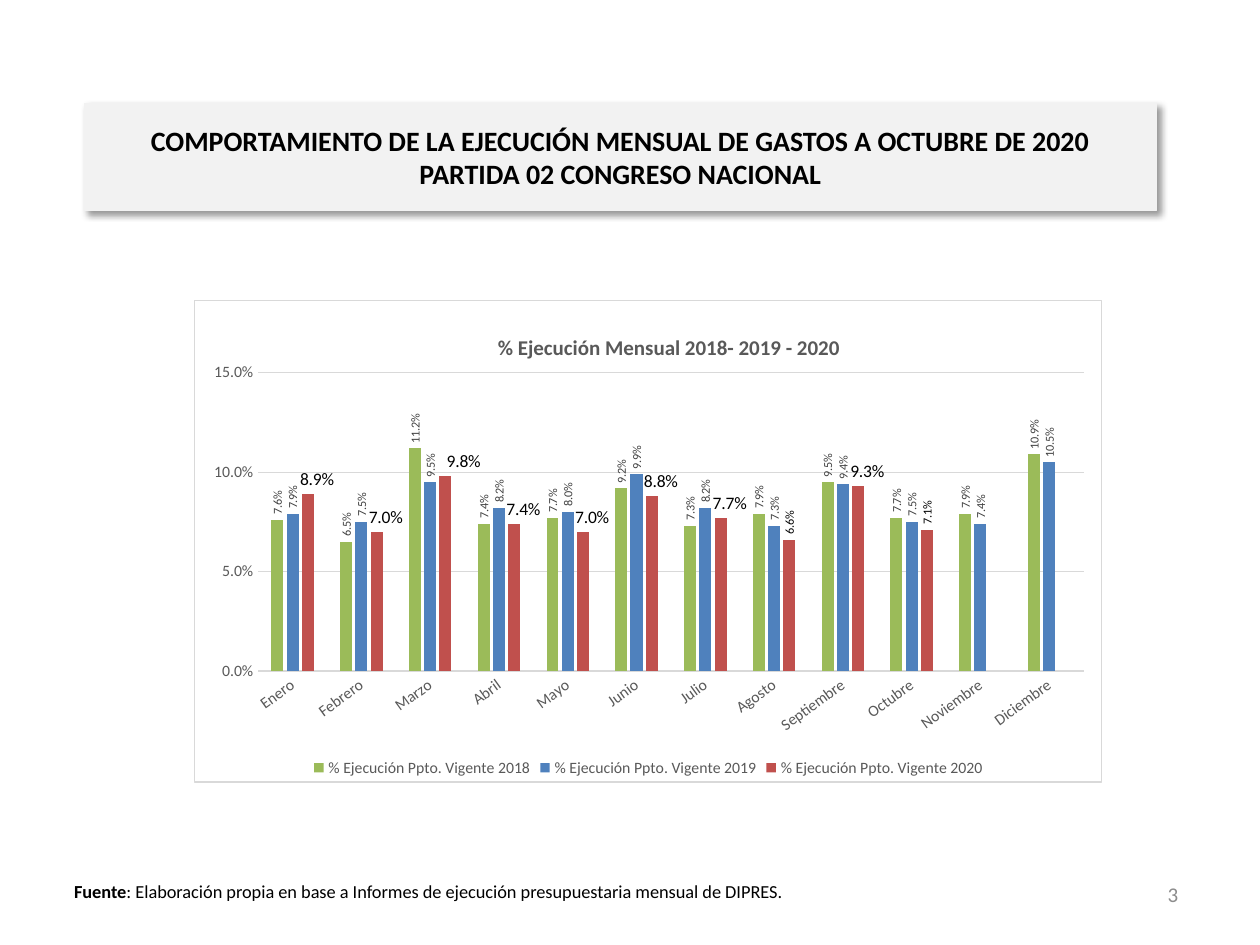
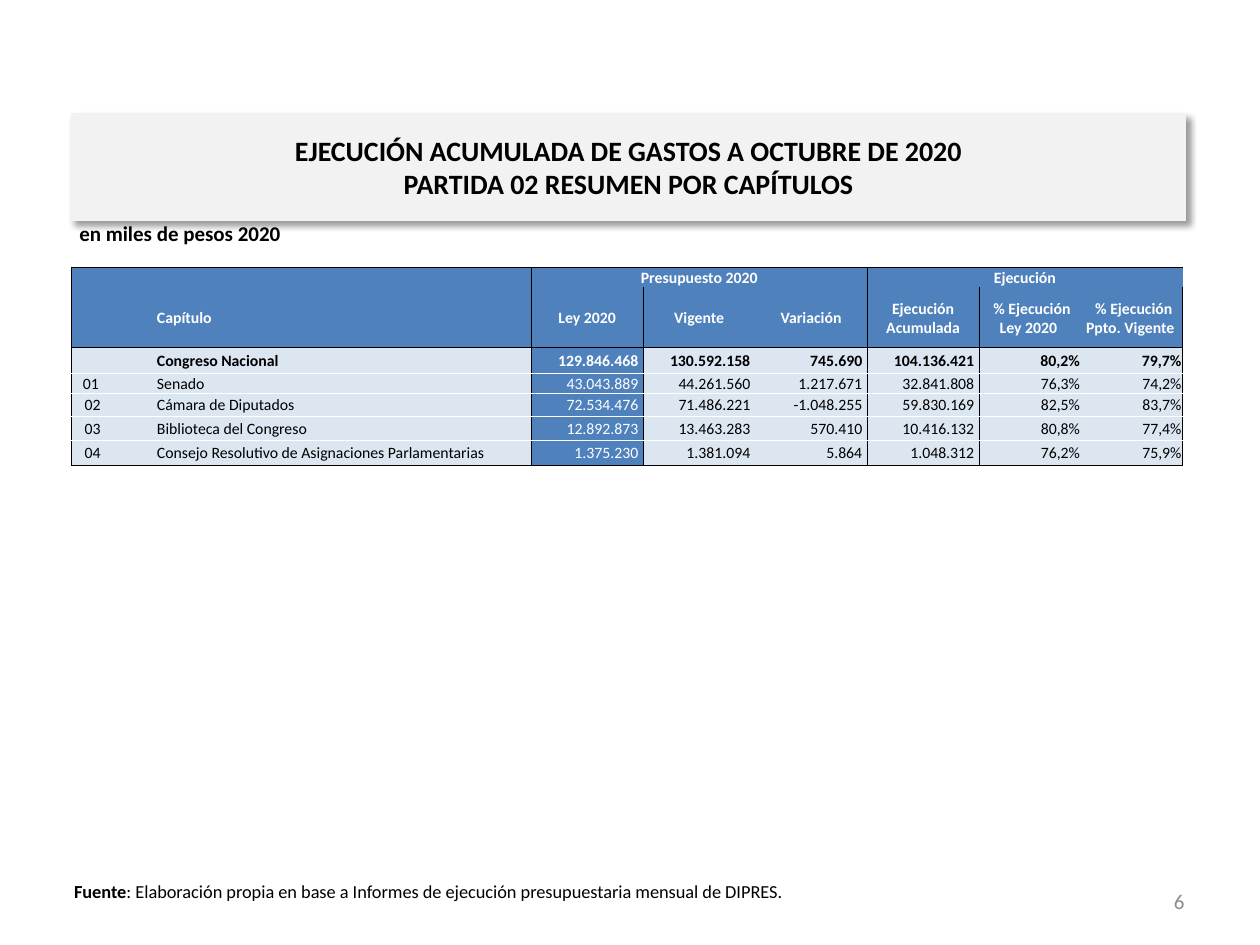
from lxml import etree
from pptx import Presentation
from pptx import util as u
from pptx.chart import data as chart_data
from pptx.dml import color
from pptx.enum import chart as ch, text
from pptx.oxml import parse_xml
from pptx.oxml import ns

# Shared look
FONT = "Calibri"
BLACK, WHITE, GREY, PALE = "000000", "FFFFFF", "595959", "D9D9D9"
BAND, PAGE_GREY = "F2F2F2", "8C8C8C"
BLUE, GREEN, RED, LIGHT_BLUE = "4F81BD", "9BBB59", "C0504D", "DCE6F1"
ALIGN, ANCHOR = text.PP_ALIGN, text.MSO_ANCHOR
NO_STYLE = "{2D5ABB26-0587-4C30-8999-92F81FD0307C}"

MONTHS = ["Enero", "Febrero", "Marzo", "Abril", "Mayo", "Junio", "Julio",
          "Agosto", "Septiembre", "Octubre", "Noviembre", "Diciembre"]
# Year: monthly execution, bar colour, label colour
YEARS = {
    2018: ([.076, .065, .112, .074, .077, .092, .073, .079, .095, .077, .079, .109],
           GREEN, "404040"),
    2019: ([.079, .075, .095, .082, .08, .099, .082, .073, .094, .075, .074, .105],
           BLUE, "404040"),
    2020: ([.089, .07, .098, .074, .07, .088, .077, .066, .093, .071, None, None],
           RED, BLACK),
}
# Sideways shift of 2020 labels, as a share of the chart width
LABEL_SHIFTS = {0: .01, 1: .01, 2: .02, 3: .01, 4: .01, 5: .01, 6: .01, 8: .01}

COLUMN_WIDTHS = [24, 24, 214.6, 64, 64, 64, 64, 58.4, 58]
ROW_HEIGHTS = [11.5, 34.6, 14.6, 11.5, 12.8, 14, 14]
HEADINGS = ["", "", "Capítulo", "Ley 2020", "Vigente", "Variación",
            "Ejecución Acumulada", " % Ejecución Ley 2020 ",
            " % Ejecución Ppto. Vigente "]
CHAPTERS = [
    ["", "", "Congreso Nacional", "129.846.468 ", "130.592.158 ", "745.690 ",
     "104.136.421 ", "80,2%", "79,7%"],
    ["01 ", "", "Senado", "43.043.889 ", "44.261.560 ", "1.217.671 ",
     "32.841.808 ", "76,3%", "74,2%"],
    ["02", "", "Cámara de Diputados", "72.534.476 ", "71.486.221 ", "-1.048.255 ",
     "59.830.169 ", "82,5%", "83,7%"],
    ["03", "", "Biblioteca del Congreso", "12.892.873 ", "13.463.283 ", "570.410 ",
     "10.416.132 ", "80,8%", "77,4%"],
    ["04", "", "Consejo Resolutivo de Asignaciones Parlamentarias", "1.375.230 ",
     "1.381.094 ", "5.864 ", "1.048.312 ", "76,2%", "75,9%"],
]


def rgb(value):
    return color.RGBColor.from_string(value)


def style_font(font, size, tint, bold=False):
    font.name, font.size, font.bold = FONT, u.Pt(size), bold
    font.color.rgb = rgb(tint)


def write(para, words, size=9, tint=BLACK, bold=False, align=None):
    """Add one formatted run to a paragraph."""
    if align is not None:
        para.alignment = align
    span = para.add_run()
    span.text = words
    style_font(span.font, size, tint, bold)


def add_text(page, left, top, width, height, anchor=ANCHOR.TOP):
    """Add a wrapping text box and return its first paragraph."""
    box = page.shapes.add_textbox(*map(u.Pt, (left, top, width, height)))
    box.text_frame.word_wrap = True
    box.text_frame.vertical_anchor = anchor
    return box.text_frame.paragraphs[0]


# Title band, page number and source line
def add_title(page, lines, left, top, width, height=61.2):
    band = page.shapes.title
    band.left, band.top, band.width, band.height = map(u.Pt, (left, top, width, height))
    band.fill.solid()
    band.fill.fore_color.rgb = rgb(BAND)
    band.line.color.rgb = rgb(BAND)
    band.line.width = u.Pt(0.75)
    band._element.spPr.append(parse_xml(
        f'<a:effectLst {ns.nsdecls("a")}><a:outerShdw blurRad="{u.Pt(4)}" '
        f'dist="{u.Pt(3)}" dir="2700000" algn="tl" rotWithShape="0">'
        f'<a:srgbClr val="{BLACK}"><a:alpha val="40000"/></a:srgbClr>'
        '</a:outerShdw></a:effectLst>'))
    frame = band.text_frame
    frame.auto_size = text.MSO_AUTO_SIZE.NONE
    frame.word_wrap = True
    frame.vertical_anchor = ANCHOR.MIDDLE
    para = frame.paragraphs[0]
    para.alignment = ALIGN.CENTER
    for index, line in enumerate(lines):
        if index:
            para.add_line_break()
        write(para, line, size=16, bold=True)


def add_footer(page, number, left, top):
    para = add_text(page, left, top, 167.8, 28.8, ANCHOR.MIDDLE)
    write(para, number, size=12, tint=PAGE_GREY, align=ALIGN.RIGHT)
    source = add_text(page, 35.3, 499.7, 648, 28.8)
    write(source, "Fuente", size=10.5, bold=True)
    write(source, ": Elaboración propia en base a Informes de ejecución "
                  "presupuestaria mensual de DIPRES.", size=10.5)


# Chart
def place(parent, index, **shares):
    """Give a chart part a manual layout, in shares of the chart."""
    old = parent.find(ns.qn("c:layout"))
    if old is not None:
        parent.remove(old)
    layout = etree.Element(ns.qn("c:layout"))
    manual = etree.SubElement(layout, ns.qn("c:manualLayout"))
    for tag, value in shares.items():
        etree.SubElement(manual, ns.qn(f"c:{tag}"), val=str(value))
    parent.insert(index, layout)


def rotate(text_owner, degrees):
    body = text_owner._element.find(f'{ns.qn("c:txPr")}/{ns.qn("a:bodyPr")}')
    body.set("rot", str(degrees * 60000))
    body.set("vert", "horz")


def thin_line(line):
    line.color.rgb = rgb(PALE)
    line.width = u.Pt(0.75)


def style_axes(chart):
    for axis in (chart.category_axis, chart.value_axis):
        axis.major_tick_mark = axis.minor_tick_mark = ch.XL_TICK_MARK.NONE
        style_font(axis.tick_labels.font, 9, GREY)
    thin_line(chart.category_axis.format.line)
    rotate(chart.category_axis, -36)
    values = chart.value_axis
    values.minimum_scale, values.maximum_scale, values.major_unit = 0, .15, .05
    values.tick_labels.number_format = "0.0%"
    values.tick_labels.number_format_is_linked = False
    values.format.line.fill.background()
    thin_line(values.major_gridlines.format.line)


def style_series(series, fill, label_tint):
    series.format.fill.solid()
    series.format.fill.fore_color.rgb = rgb(fill)
    series.invert_if_negative = False
    labels = series.data_labels
    labels.show_value = True
    labels.position = ch.XL_LABEL_POSITION.OUTSIDE_END
    labels.number_format, labels.number_format_is_linked = "0.0%", False
    style_font(labels.font, 7, label_tint)
    rotate(labels, -90)


def shift_labels(series, shifts):
    for index, shift in shifts.items():
        label = series.points[index].data_label
        label.position = ch.XL_LABEL_POSITION.OUTSIDE_END
    for item in series.data_labels._element.findall(ns.qn("c:dLbl")):
        index = int(item.find(ns.qn("c:idx")).get("val"))
        place(item, 1, x=shifts[index], y=0)


def add_monthly_chart(page):
    data = chart_data.CategoryChartData(number_format="0.0%")
    data.categories = MONTHS
    for year, (values, _, _) in YEARS.items():
        data.add_series(f"% Ejecución Ppto. Vigente {year}", values)
    chart = page.shapes.add_chart(
        ch.XL_CHART_TYPE.COLUMN_CLUSTERED,
        *map(u.Pt, (110.9, 171.4, 519.1, 275.8)), data).chart
    style_font(chart.font, 10, BLACK)

    chart.has_title = True
    write(chart.chart_title.text_frame.paragraphs[0],
          "% Ejecución Mensual 2018- 2019 - 2020", size=12, tint=GREY, bold=True)
    place(chart.chart_title._element, 1, xMode="edge", yMode="edge", x=.33, y=.06)
    chart.has_legend = True
    chart.legend.position = ch.XL_LEGEND_POSITION.BOTTOM
    chart.legend.include_in_layout = False
    style_font(chart.legend.font, 9, GREY)

    plot = chart.plots[0]
    plot.gap_width, plot.overlap, plot.vary_by_categories = 219, -27, False
    style_axes(chart)
    for series, (_, fill, label_tint) in zip(plot.series, YEARS.values()):
        style_series(series, fill, label_tint)
    shift_labels(plot.series[2], LABEL_SHIFTS)

    # Plot position, white ground and pale frame
    body = chart._chartSpace.find(ns.qn("c:chart"))
    place(body.find(ns.qn("c:plotArea")), 0, layoutTarget="inner",
          xMode="edge", yMode="edge", x=.07, y=.15, w=.91, h=.62)
    body.addnext(parse_xml(
        f'<c:spPr {ns.nsdecls("c", "a")}><a:solidFill><a:srgbClr val="{WHITE}"/>'
        f'</a:solidFill><a:ln w="{u.Pt(0.75)}"><a:solidFill>'
        f'<a:srgbClr val="{PALE}"/></a:solidFill></a:ln></c:spPr>'))


# Table
def border_cell(cell, row, column):
    """Black around the column groups and blocks, white between body rows."""
    last = len(ROW_HEIGHTS) - 1
    edges = {
        "lnL": BLACK if column % 3 == 0 else None,
        "lnR": BLACK if column % 3 == 2 else None,
        "lnT": BLACK if row in (0, 2) else WHITE if row > 2 else None,
        "lnB": BLACK if row in (1, last) else WHITE if row > 1 else None,
    }
    properties = cell._tc.get_or_add_tcPr()
    for tag, tint in edges.items():
        if tint:
            line = etree.SubElement(properties, ns.qn(f"a:{tag}"), w=str(u.Pt(0.5)))
            fill = etree.SubElement(line, ns.qn("a:solidFill"))
            etree.SubElement(fill, ns.qn("a:srgbClr"), val=tint)


def fill_cell(cell, words, row, column):
    heading = row < 2
    blue = heading or column == 3
    border_cell(cell, row, column)
    cell.fill.solid()
    cell.fill.fore_color.rgb = rgb(BLUE if blue else LIGHT_BLUE)
    cell.margin_left = cell.margin_right = cell.margin_top = u.Pt(0.75)
    cell.margin_bottom = 0
    cell.vertical_anchor = ANCHOR.MIDDLE if row else ANCHOR.BOTTOM
    para = cell.text_frame.paragraphs[0]
    if not words:
        para._p.get_or_add_endParaRPr().set("sz", "900")
        return
    if column == 2:
        align = ALIGN.LEFT if heading else ALIGN.JUSTIFY
    else:
        align = ALIGN.CENTER if heading or column == 0 else ALIGN.RIGHT
    write(para, words, tint=WHITE if blue else BLACK, bold=row < 3, align=align)


def add_chapter_table(page):
    groups = [""] * len(HEADINGS)
    groups[3], groups[6] = "Presupuesto 2020", "Ejecución"
    rows = [groups, HEADINGS, *CHAPTERS]
    table = page.shapes.add_table(
        len(rows), len(HEADINGS), u.Pt(41), u.Pt(152.6),
        u.Pt(sum(COLUMN_WIDTHS)), u.Pt(sum(ROW_HEIGHTS))).table
    table.first_row = table.horz_banding = False
    table._tbl.tblPr.find(ns.qn("a:tableStyleId")).text = NO_STYLE
    for column, width in zip(table.columns, COLUMN_WIDTHS):
        column.width = u.Pt(width)
    for row, height in zip(table.rows, ROW_HEIGHTS):
        row.height = u.Pt(height)
    for r, row in enumerate(rows):
        for c, words in enumerate(row):
            fill_cell(table.cell(r, c), words, r, c)
    for start in (3, 6):
        table.cell(0, start).merge(table.cell(0, start + 2))


def main():
    deck = Presentation()
    deck.slide_width, deck.slide_height = u.Pt(720), u.Pt(540)
    title_only = deck.slide_layouts[5]

    # Monthly execution
    page = deck.slides.add_slide(title_only)
    add_title(page, ["COMPORTAMIENTO DE LA EJECUCIÓN MENSUAL DE GASTOS A OCTUBRE DE 2020",
                     "PARTIDA 02 CONGRESO NACIONAL"], 48.2, 59, 612.5)
    add_footer(page, "3", 512.6, 496.8)
    add_monthly_chart(page)

    # Summary by chapter
    page = deck.slides.add_slide(title_only)
    add_title(page, ["EJECUCIÓN ACUMULADA DE GASTOS A OCTUBRE DE 2020",
                     "PARTIDA 02 RESUMEN POR CAPÍTULOS"], 41, 64.8, 636.5)
    add_footer(page, "6", 516.2, 500.4)
    write(add_text(page, 38.2, 122.4, 642.2, 31), "en miles de pesos 2020",
          size=12, bold=True)
    add_chapter_table(page)

    deck.save("out.pptx")


if __name__ == "__main__":
    main()
